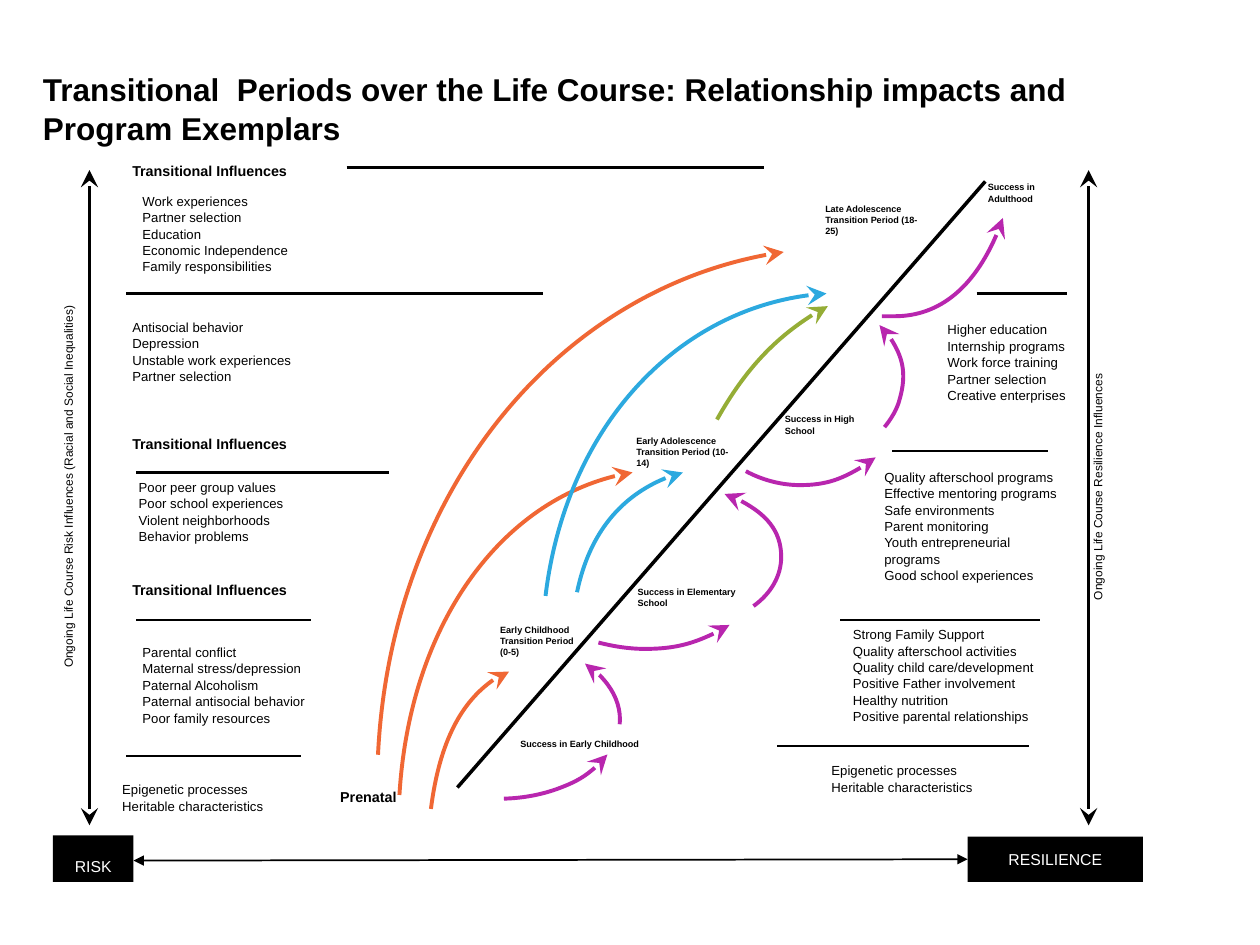
from lxml.etree import SubElement
from pptx import Presentation
from pptx.dml.color import RGBColor
from pptx.enum.shapes import MSO_CONNECTOR, MSO_SHAPE
from pptx.enum.text import MSO_ANCHOR, PP_ALIGN
from pptx.oxml.ns import qn
from pptx.util import Inches, Pt

COLORS = {"black": "000000", "white": "FFFFFF", "orange": "F06734",
          "blue": "2CA9DF", "green": "95AD36", "purple": "B826AE"}
TIGHT = (0.05, 0.03)
NARROW = (0.02, 0.03)
ROOMY = (0.1, 0.05)

HEADING = {"size": Pt(8.2), "bold": True}
LIST = {"size": Pt(7.5), "bold": False}
LABEL = {"size": Pt(5.2), "bold": True}
AXIS = {"size": Pt(6.8), "bold": False}
TITLE = {"size": Pt(18), "bold": True}
BADGE = {"size": Pt(9), "bold": False}

HEADINGS = [("Prenatal", 2.65, 6.22, 0.89)] + [
    ("Transitional Influences", 1, top, 1.92) for top in (1.25, 3.42, 4.58)]

LABELS = [
    ("Success in Adulthood", 7.79, 1.41, 0.84, 0.43),
    ("Success in High School", 6.18, 3.25, 0.84, 0.43),
    ("Success in Elementary School", 5.01, 4.62, 1.09, 0.35),
    ("Success in Early Childhood", 4.08, 5.83, 1.09, 0.35),
    ("Early Childhood Transition Period (0-5)", 3.92, 4.92, 0.78, 0.54),
    ("Early Adolescence Transition Period (10-14)", 5, 3.42, 0.92, 0.54),
    ("Late Adolescence Transition Period (18-25)", 6.5, 1.58, 0.87, 0.54),
]

ORIGINS = ["Epigenetic processes", "Heritable characteristics"]
RISK_LISTS = [
    (["Work experiences", "Partner selection", "Education",
      "Economic Independence", "Family responsibilities"], 1.08, 1.5, 1.58, 0.75),
    (["Antisocial behavior", "Depression", "Unstable work experiences",
      "Partner selection"], 1, 2.5, 1.58, 0.58),
    (["Poor peer group values", "Poor school experiences",
      "Violent neighborhoods", "Behavior problems"], 1.05, 3.77, 1.58, 0.58),
    (["Parental conflict", "Maternal stress/depression", "Paternal Alcoholism",
      "Paternal antisocial behavior", "Poor family resources"], 1.08, 5.08, 1.58, 0.9),
    (ORIGINS, 0.92, 6.17, 1.4, 0.39),
]
RESILIENCE_LISTS = [
    (["Higher education", "Internship programs", "Work force training",
      "Partner selection", "Creative enterprises"], 7.42, 2.5, 1.25, 0.73),
    (["Quality afterschool programs", "Effective mentoring programs",
      "Safe environments", "Parent monitoring", "Youth entrepreneurial programs",
      "Good school experiences"], 6.92, 3.67, 1.62, 0.98),
    (["Strong Family Support", "Quality afterschool activities",
      "Quality child care/development", "Positive Father involvement",
      "Healthy nutrition", "Positive parental relationships"], 6.67, 4.92, 1.75, 0.86),
    (ORIGINS, 6.5, 6, 1.35, 0.35),
]

# Horizontal rules: left, right, y
RULES = [(2.75, 6.06, 1.33), (1, 4.31, 2.33), (1.08, 3.09, 3.75),
         (1.08, 2.47, 4.92), (1, 2.39, 6), (7.75, 8.47, 2.33),
         (7.08, 8.32, 3.58), (6.67, 8.25, 4.92), (6.17, 8.17, 5.92)]

# Bezier points: start, then two controls and an end per segment, arrowhead last
CURVES = [
    ("orange", [(3, 5.99), (3.1, 3.93), (4.46, 2.25), (6.22, 2)]),
    ("orange", [(3.17, 6.31), (3.25, 4.98), (4.02, 3.91), (5.02, 3.75)]),
    ("orange", [(3.42, 6.42), (3.49, 5.87), (3.74, 5.44), (4.04, 5.33)]),
    ("blue", [(4.58, 4.7), (4.68, 4.22), (5.01, 3.85), (5.42, 3.75)]),
    ("blue", [(4.33, 4.73), (4.49, 3.41), (5.42, 2.4), (6.56, 2.33)]),
    ("green", [(5.69, 3.33), (5.92, 2.92), (6.24, 2.6), (6.57, 2.43)]),
    ("purple", [(4.75, 5.1), (4.87, 5.13), (4.99, 5.15), (5.12, 5.15),
                (5.36, 5.15), (5.6, 5.08), (5.79, 4.96)]),
    ("purple", [(5.98, 4.81), (6.12, 4.71), (6.2, 4.57), (6.2, 4.42),
                (6.2, 4.21), (6.02, 4.01), (5.75, 3.92)]),
    ("purple", [(5.92, 3.74), (6.05, 3.81), (6.2, 3.85), (6.35, 3.85),
                (6.56, 3.85), (6.77, 3.77), (6.95, 3.63)]),
    ("purple", [(7.02, 3.39), (7.07, 3.33), (7.12, 3.25), (7.14, 3.17),
                (7.2, 2.96), (7.14, 2.73), (6.98, 2.58)]),
    ("purple", [(7, 2.51), (7.03, 2.51), (7.07, 2.51), (7.1, 2.51),
                (7.47, 2.51), (7.8, 2.21), (7.96, 1.73)]),
]
ARC_ANGLES = [(17.93, 86.37), (327.05, 2.33)]


def rgb(name):
    return RGBColor.from_string(COLORS[name])


def box_of(*lengths):
    return [Inches(length) for length in lengths]


def write(shape, lines, font, color="black", insets=ROOMY,
          align=PP_ALIGN.LEFT, anchor=MSO_ANCHOR.TOP, wrap=True):
    frame = shape.text_frame
    frame.text = "\n".join(lines)
    across, down = box_of(*insets)
    settings = {"word_wrap": wrap, "vertical_anchor": anchor,
                "margin_left": across, "margin_right": across,
                "margin_top": down, "margin_bottom": down}
    for name, value in settings.items():
        setattr(frame, name, value)
    for paragraph in frame.paragraphs:
        paragraph.alignment = align
        paragraph.line_spacing = 1.04
        for name, value in {"name": "Arial", **font}.items():
            setattr(paragraph.font, name, value)
        paragraph.font.color.rgb = rgb(color)


def add_text(slide, lines, box, font, **options):
    shape = slide.shapes.add_textbox(*box_of(*box))
    write(shape, lines, font, **options)
    return shape


def style_line(shape, color, width, heads=(), kind="stealth", size="lg"):
    shape.line.color.rgb = rgb(color)
    shape.line.width = Pt(width)
    outline = shape.line._get_or_add_ln()
    for end in heads:
        SubElement(outline, qn(f"a:{end}"), type=kind, w=size, len=size)


def add_line(slide, start, end, width=1.5, **arrow):
    line = slide.shapes.add_connector(MSO_CONNECTOR.STRAIGHT, *box_of(*start, *end))
    style_line(line, "black", width, **arrow)
    SubElement(line._element.spPr, qn("a:effectLst"))


def add_curve(slide, color, points):
    start, *others = [tuple(box_of(*point)) for point in points]
    builder = slide.shapes.build_freeform(*start)
    builder.add_line_segments(others, close=False)
    shape = builder.convert_to_shape()
    # Turn each three straight steps into one cubic Bezier
    outline = shape._element.find(".//" + qn("a:path"))
    steps = outline.findall(qn("a:lnTo"))
    for first in range(0, len(steps), 3):
        bezier = SubElement(outline, qn("a:cubicBezTo"))
        for step in steps[first:first + 3]:
            bezier.append(step[0])
            outline.remove(step)
    shape.fill.background()
    shape.shadow.inherit = False
    style_line(shape, color, 2.25, heads=["tailEnd"])


def add_arc(slide, angles):
    shape = slide.shapes.add_shape(MSO_SHAPE.ARC, *box_of(3, 5.08, 1.92, 1.26))
    for index, angle in enumerate(angles):
        shape.adjustments[index] = angle * 0.6  # 60000 units a degree, over 100000
    shape.fill.background()
    shape.shadow.inherit = False
    style_line(shape, "purple", 2.25, heads=["headEnd"])


def add_badge(slide, text, box, **options):
    shape = slide.shapes.add_shape(MSO_SHAPE.RECTANGLE, *box_of(*box))
    shape.fill.solid()
    shape.fill.fore_color.rgb = rgb("black")
    shape.line.fill.background()
    shape.shadow.inherit = False
    write(shape, [text], BADGE, color="white", align=PP_ALIGN.CENTER, **options)


def add_title(slide, text):
    title = slide.shapes.title
    title.left, title.top, title.width, title.height = box_of(0.24, 0.49, 9.17, 0.71)
    write(title, [text], TITLE)


def main():
    presentation = Presentation()
    presentation.slide_width, presentation.slide_height = box_of(10, 7.5)
    slide = presentation.slides.add_slide(presentation.slide_layouts[5])
    add_title(slide, "Transitional  Periods over the Life Course: "
                     "Relationship impacts and Program Exemplars")

    # Life course diagonal, rules and curved arrows
    add_line(slide, (3.63, 6.25), (7.82, 1.44), width=2)
    for left, right, y in RULES:
        add_line(slide, (left, y), (right, y))
    for color, points in CURVES:
        add_curve(slide, color, points)
    for angles in ARC_ANGLES:
        add_arc(slide, angles)

    # Headings, labels and lists
    for text, left, top, width in HEADINGS:
        add_text(slide, [text], (left, top, width, 0.31), HEADING, insets=TIGHT)
    for text, *box in LABELS:
        add_text(slide, [text], box, LABEL, insets=TIGHT)
    for lists, insets in ((RISK_LISTS, TIGHT), (RESILIENCE_LISTS, ROOMY)):
        for lines, *box in lists:
            add_text(slide, lines, box, LIST, insets=insets)

    # Vertical axes
    both = ["headEnd", "tailEnd"]
    for x, left, text in (
            (0.71, -1.68, "Ongoing Life Course Risk Influences "
                          "(Racial and Social Inequalities)"),
            (8.64, 6.49, "Ongoing Life Course Resilience Influences")):
        add_line(slide, (x, 6.55), (x, 1.35), heads=both)
        caption = add_text(slide, [text], (left, 3.74, 4.51, 0.25), AXIS,
                           insets=NARROW, align=PP_ALIGN.CENTER)
        caption.rotation = 270

    # Risk to resilience scale
    add_badge(slide, "RISK", (0.42, 6.63, 0.64, 0.37), anchor=MSO_ANCHOR.BOTTOM)
    add_badge(slide, "RESILIENCE", (7.68, 6.64, 1.39, 0.36),
              anchor=MSO_ANCHOR.MIDDLE, wrap=False)
    add_line(slide, (1.06, 6.83), (7.68, 6.82), width=1,
             heads=both, kind="triangle", size="med")

    presentation.save("out.pptx")


if __name__ == "__main__":
    main()
